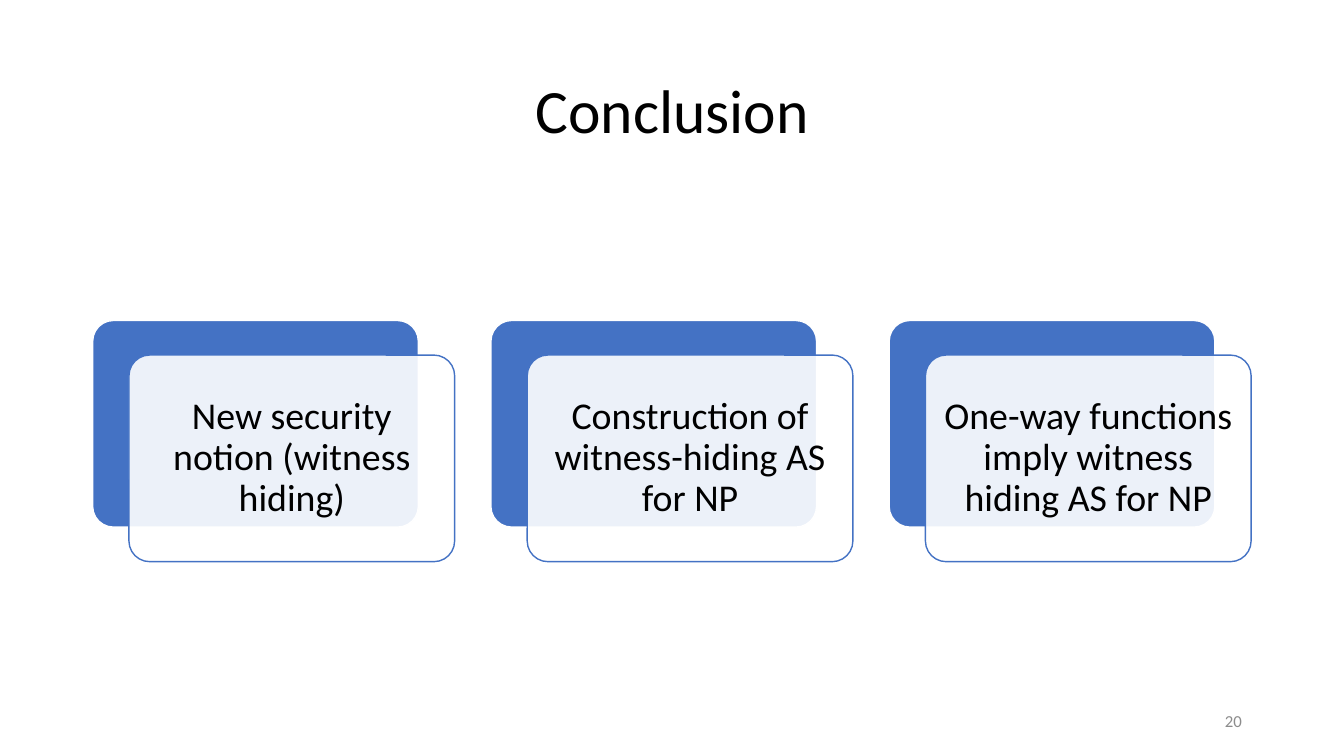
from lxml.etree import SubElement
from pptx import Presentation
from pptx.dml.color import RGBColor
from pptx.enum.shapes import MSO_SHAPE as Preset
from pptx.enum.text import MSO_ANCHOR as Anchor, PP_ALIGN as Align
from pptx.oxml.ns import qn
from pptx.util import Inches, Pt

COLORS = {"blue": "4472C4", "white": "FFFFFF", "black": "000000", "gray": "8C8C8C"}
CONCLUSIONS = [
    "New security notion (witness hiding)",
    "Construction of witness-hiding AS for NP",
    "One-way functions imply witness hiding AS for NP",
]
CARD_LEFT, CARD_TOP = 6.9, 42.4
CARD_WIDTH, CARD_HEIGHT = 24.23, 27.33
CARD_PITCH = 29.63
PANEL_RIGHT, PANEL_DOWN = 2.7, 4.57


def color(name):
    return RGBColor.from_string(COLORS[name])


class ConclusionSlide:
    font_name = "Calibri"

    def __init__(self, presentation):
        self.width = presentation.slide_width
        self.height = presentation.slide_height
        self.slide = presentation.slides.add_slide(presentation.slide_layouts[5])

    def area(self, left, top, width, height):
        return [
            round(share * size / 100)
            for share, size in zip(
                (left, top, width, height),
                (self.width, self.height, self.width, self.height),
            )
        ]

    def set_text(self, shape, text, size, color_name, align=Align.CENTER, spacing=0.9):
        frame = shape.text_frame
        frame.word_wrap = True
        frame.vertical_anchor = Anchor.MIDDLE
        paragraph = frame.paragraphs[0]
        paragraph.text = text
        paragraph.alignment = align
        paragraph.line_spacing = spacing
        paragraph.font.name = self.font_name
        paragraph.font.size = Pt(size)
        paragraph.font.color.rgb = color(color_name)

    def title(self, text):
        shape = self.slide.shapes.title
        shape.left, shape.top, shape.width, shape.height = self.area(6.9, 5.33, 86.25, 19.33)
        self.set_text(shape, text, 44, "black")

    def rounded_box(self, left, top, fill, line):
        shape = self.slide.shapes.add_shape(
            Preset.ROUNDED_RECTANGLE, *self.area(left, top, CARD_WIDTH, CARD_HEIGHT)
        )
        shape.adjustments[0] = 0.1
        shape.shadow.inherit = False
        shape.fill.solid()
        shape.fill.fore_color.rgb = color(fill)
        shape.line.color.rgb = color(line)
        shape.line.width = Pt(1)
        return shape

    def card(self, left, top, text):
        self.rounded_box(left, top, "blue", "white")
        panel = self.rounded_box(left + PANEL_RIGHT, top + PANEL_DOWN, "white", "blue")
        fill_color = panel.element.spPr.find(qn("a:solidFill"))[0]
        SubElement(fill_color, qn("a:alpha"), val="90000")
        frame = panel.text_frame
        frame.margin_left = frame.margin_right = Inches(0.11)
        frame.margin_top = frame.margin_bottom = Inches(0.11)
        self.set_text(panel, text, 27, "black")

    def page_number(self, text):
        box = self.slide.shapes.add_textbox(*self.area(70.65, 92.67, 22.5, 5.33))
        self.set_text(box, text, 12, "gray", Align.RIGHT, 1.0)


def main():
    presentation = Presentation()
    presentation.slide_width = Inches(13.33)
    presentation.slide_height = Inches(7.5)
    conclusion = ConclusionSlide(presentation)
    conclusion.title("Conclusion")
    for column, text in enumerate(CONCLUSIONS):
        conclusion.card(CARD_LEFT + column * CARD_PITCH, CARD_TOP, text)
    conclusion.page_number("20")
    presentation.save("out.pptx")


if __name__ == "__main__":
    main()
